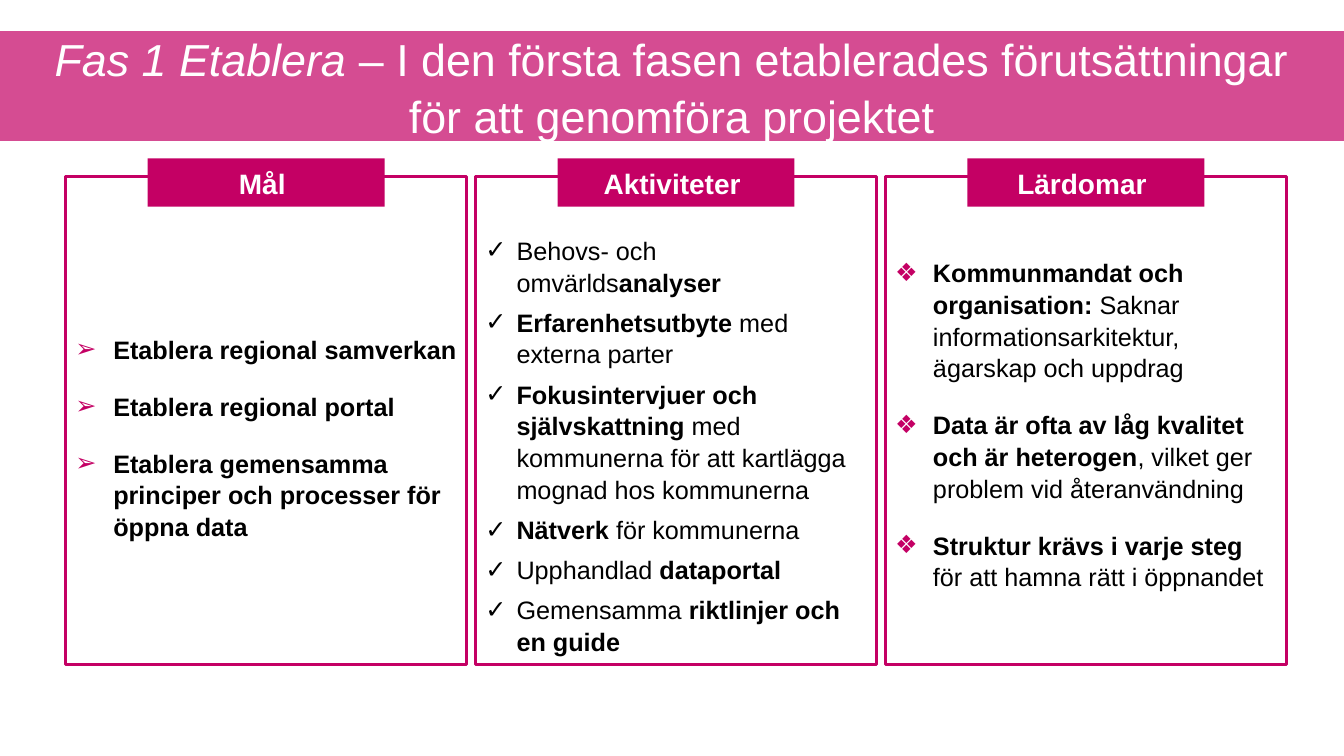
from lxml import etree
from pptx import Presentation
from pptx import util as u
from pptx.dml.color import RGBColor
from pptx.enum import shapes, text
from pptx.oxml import ns

COLORS = {"magenta": "C40064", "white": "FFFFFF", "black": "000000"}
FONT = "Arial"
LINE_SPACING = 1.05

# Each paragraph is a list of (text, emphasised) spans.
TITLE = [
    ("Fas 1 Etablera ", True),
    ("– I den första fasen etablerades förutsättningar för att genomföra projektet", False),
]
COLUMNS = [
    {
        "heading": "Mål ", "bullet": "➢", "bullet_color": "magenta",
        "indent": 0.375, "gap": 18, "top_inset": 0.38,
        "items": [
            [("Etablera regional samverkan", True)],
            [("Etablera regional portal", True)],
            [("Etablera gemensamma principer och processer för öppna data", True)],
        ],
    },
    {
        "heading": "Aktiviteter ", "bullet": "✓", "bullet_color": "black",
        "indent": 0.31, "gap": 6, "top_inset": 0.54,
        "items": [
            [("Behovs- och omvärlds", False), ("analyser", True)],
            [("Erfarenhetsutbyte", True), (" med externa parter", False)],
            [("Fokusintervjuer och självskattning ", True),
             ("med kommunerna för att kartlägga mognad hos kommunerna", False)],
            [("Nätverk ", True), ("för kommunerna", False)],
            [("Upphandlad ", False), ("dataportal", True)],
            [("Gemensamma ", False), ("riktlinjer och en guide", True)],
        ],
    },
    {
        "heading": "Lärdomar ", "bullet": "❖", "bullet_color": "magenta",
        "indent": 0.375, "gap": 18, "top_inset": 0.12,
        "items": [
            [("Kommunmandat och organisation: ", True),
             ("Saknar informationsarkitektur, ägarskap och uppdrag", False)],
            [("Data är ofta av låg kvalitet och är heterogen", True),
             (", vilket ger problem vid återanvändning", False)],
            [("Struktur krävs i varje steg ", True),
             ("för att hamna rätt i öppnandet", False)],
        ],
    },
]

COLUMN_LEFT, COLUMN_TOP = 0.65, 1.75
COLUMN_WIDTH, COLUMN_HEIGHT = 3.98, 4.84
COLUMN_PITCH = 4.065
LABEL_TOP, LABEL_WIDTH, LABEL_HEIGHT = 1.57, 2.35, 0.48


def rgb(name):
    return RGBColor.from_string(COLORS[name])


def add_box(page, place, fill, opacity=100, line=None, insets=(0.1, 0.05, 0.1, 0.05)):
    """Add a rectangle; place is left, top, width, height and opacity is in percent."""
    box = page.shapes.add_shape(shapes.MSO_SHAPE.RECTANGLE, *map(u.Inches, place))
    box.shadow.inherit = False
    box.fill.solid()
    box.fill.fore_color.rgb = rgb(fill)
    if opacity < 100:
        color = box.fill._xPr.find(".//" + ns.qn("a:srgbClr"))
        etree.SubElement(color, ns.qn("a:alpha"), val=str(opacity * 1000))
    if line:
        box.line.color.rgb = rgb(line)
        box.line.width = u.Pt(2)
    else:
        box.line.fill.background()
    frame = box.text_frame
    frame.word_wrap = True
    frame.vertical_anchor = text.MSO_ANCHOR.MIDDLE
    frame.margin_left, frame.margin_top, frame.margin_right, frame.margin_bottom = map(u.Inches, insets)
    return frame


def style(para, size, color, align):
    para.alignment = align
    para.line_spacing = LINE_SPACING
    para.font.name = FONT
    para.font.size = u.Pt(size)
    para.font.color.rgb = rgb(color)


def add_spans(para, spans, emphasis):
    """Write the spans, switching the named font attribute on or off for each."""
    for words, emphasised in spans:
        span = para.add_run()
        span.text = words
        setattr(span.font, emphasis, emphasised)


def add_bullet(para, char, color, indent):
    props = para._p.get_or_add_pPr()
    props.set("marL", str(u.Inches(indent)))
    props.set("indent", str(-u.Inches(indent)))
    bullet_color = etree.SubElement(props, ns.qn("a:buClr"))
    etree.SubElement(bullet_color, ns.qn("a:srgbClr"), val=COLORS[color])
    etree.SubElement(props, ns.qn("a:buFont"), typeface=FONT)
    etree.SubElement(props, ns.qn("a:buChar"), char=char)


def add_column(page, left, column):
    frame = add_box(page, (left, COLUMN_TOP, COLUMN_WIDTH, COLUMN_HEIGHT), "white", 80,
                    "magenta", (0.1, column["top_inset"], 0.1, 0.05))
    for number, spans in enumerate(column["items"]):
        para = frame.add_paragraph() if number else frame.paragraphs[0]
        add_bullet(para, column["bullet"], column["bullet_color"], column["indent"])
        style(para, 18, "black", text.PP_ALIGN.LEFT)
        para.space_before = u.Pt(column["gap"] if number else 0)
        add_spans(para, spans, "bold")

    label_left = left + (COLUMN_WIDTH - LABEL_WIDTH) / 2
    label = add_box(page, (label_left, LABEL_TOP, LABEL_WIDTH, LABEL_HEIGHT), "magenta")
    heading = label.paragraphs[0]
    style(heading, 20, "white", text.PP_ALIGN.CENTER)
    add_spans(heading, [(column["heading"], True)], "bold")


def main():
    deck = Presentation()
    deck.slide_width, deck.slide_height = u.Inches(13.33), u.Inches(7.5)
    page = deck.slides.add_slide(deck.slide_layouts[6])

    band = add_box(page, (-0.22, 0.29, 13.77, 1.12), "magenta", 70, "white", (0.55, 0, 0.55, 0))
    style(band.paragraphs[0], 32, "white", text.PP_ALIGN.CENTER)
    add_spans(band.paragraphs[0], TITLE, "italic")

    for number, column in enumerate(COLUMNS):
        add_column(page, COLUMN_LEFT + number * COLUMN_PITCH, column)
    deck.save("out.pptx")


if __name__ == "__main__":
    main()
